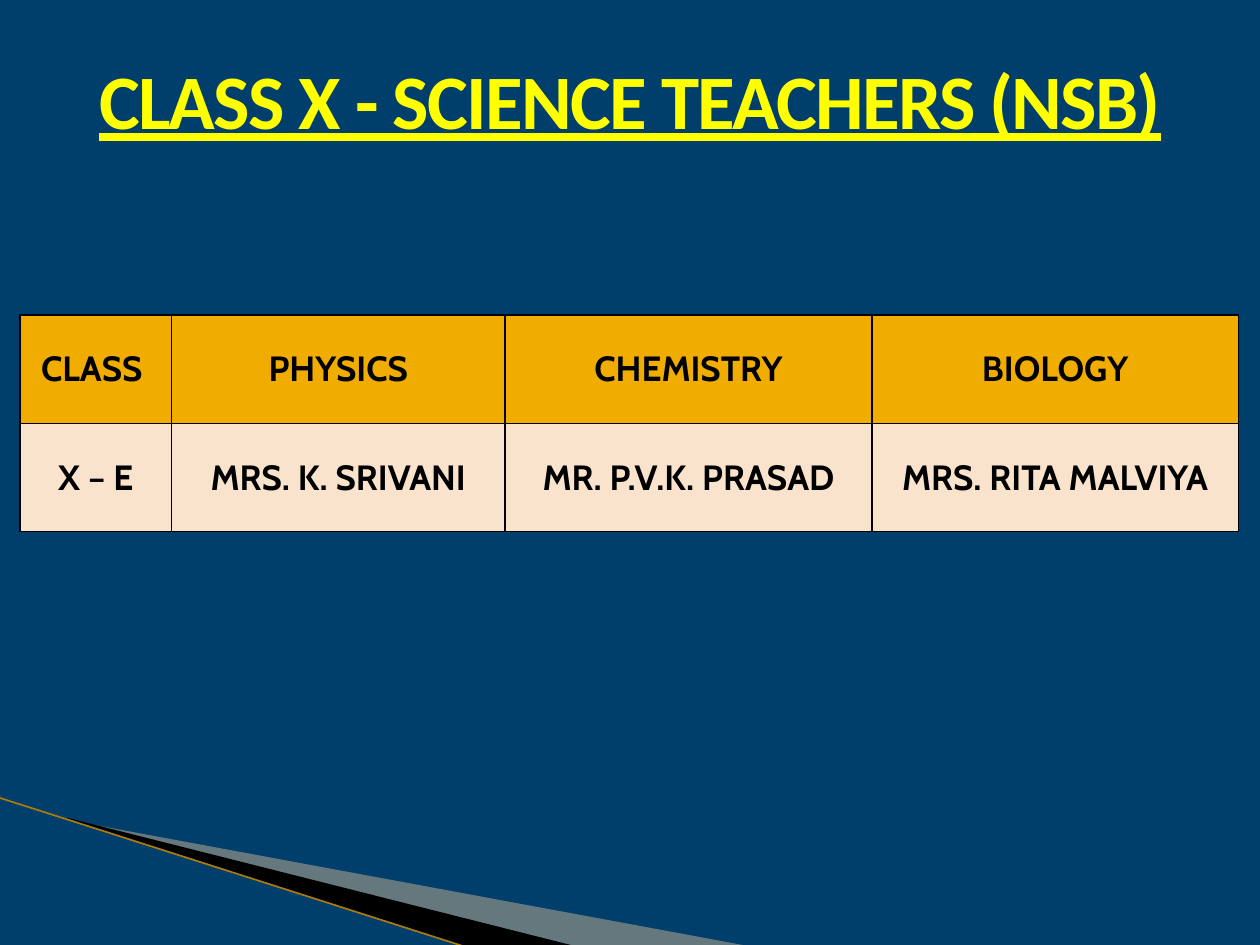
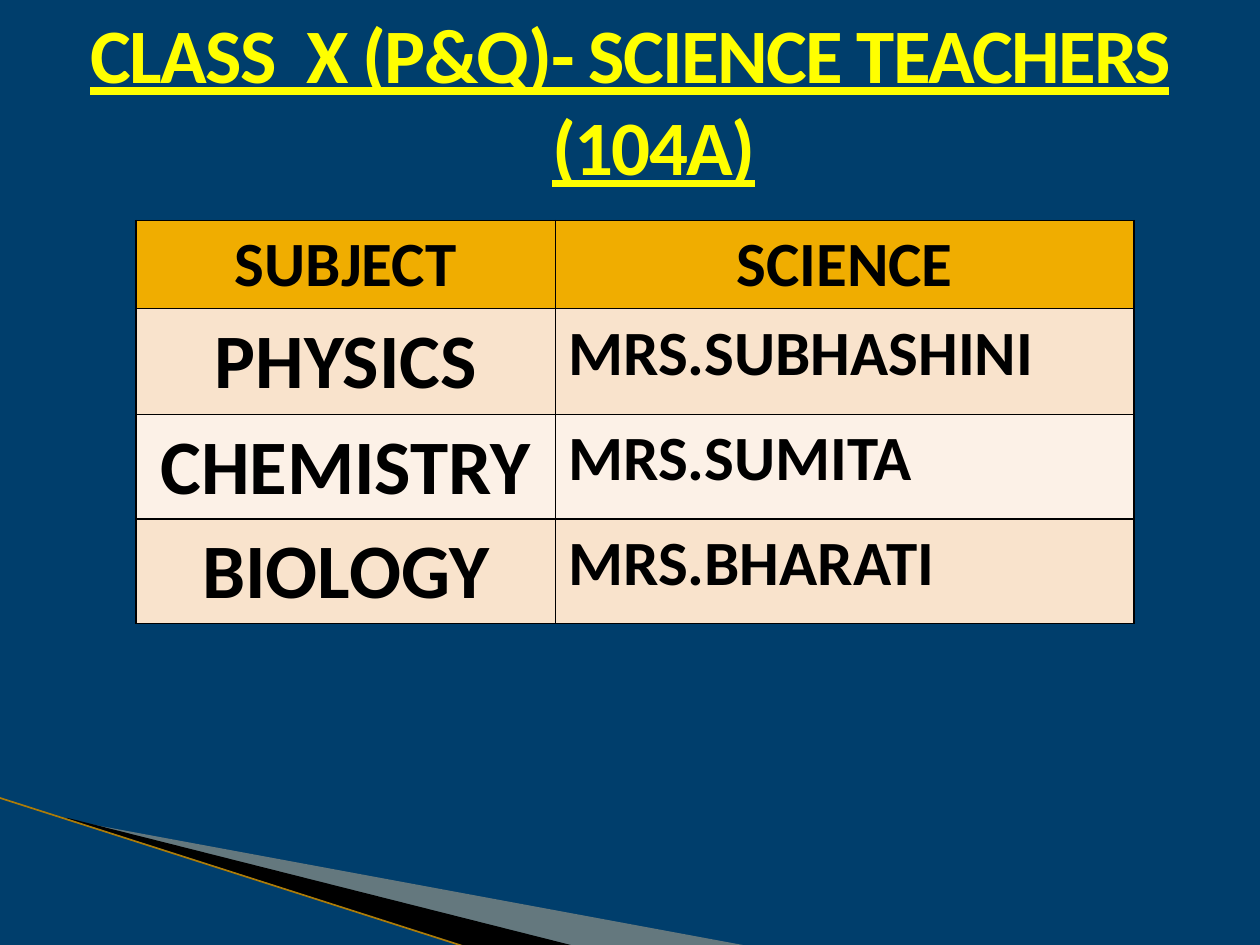
from pptx import Presentation
from pptx.dml.color import RGBColor
from pptx.enum.shapes import MSO_CONNECTOR
from pptx.enum.text import MSO_ANCHOR, PP_ALIGN
from pptx.oxml import parse_xml
from pptx.oxml.ns import nsdecls, qn
from pptx.util import Pt
from lxml import etree

PX = 9144  # 100 px to the inch
NAVY = RGBColor(0x00, 0x3E, 0x6C)
YELLOW = RGBColor(0xFF, 0xFF, 0x00)
GOLD = RGBColor(0xF0, 0xAD, 0x00)
DARK_GOLD = RGBColor(0xAD, 0x7C, 0x08)
PEACH = RGBColor(0xFC, 0xCF, 0x9B)
BAND = RGBColor(0xF9, 0xE3, 0xCC)
PALE_BAND = RGBColor(0xFC, 0xF1, 0xE7)
BLACK = RGBColor(0x00, 0x00, 0x00)

# Wedges in the lower left corner: frame, points, colour, opacity in percent
WEDGES = [
    ((78, 547, 416, 158), [(55, 651), (595, 751), (456, 751), (55, 650)], PEACH, 40),
    ((-6, 633, 416, 92), [(53, 649), (457, 751), (372, 752), (54, 650)], BLACK, 100),
]

SLIDES = [
    dict(
        title="CLASS X - SCIENCE TEACHERS (NSB)", title_height=121, spacing=1.5,
        left=16, top=250, cols=[120, 265, 291, 291], rows=[86, 86],
        font="Cabin", header_size=20, sizes=[20] * 4, anchor=MSO_ANCHOR.MIDDLE,
        margins=(5, 5), aligns=[PP_ALIGN.CENTER] * 4,
        cells=[["CLASS ", "PHYSICS", "CHEMISTRY", "BIOLOGY"],
               ["X – E", "MRS. K. SRIVANI", "MR. P.V.K. PRASAD", "MRS. RITA MALVIYA"]],
    ),
    dict(
        title="CLASS  X (P&Q)- SCIENCE TEACHERS (104A)", title_height=158, spacing=1.0,
        left=108, top=175, cols=[333, 459], rows=[70, 84, 83, 83],
        font="Calibri", header_size=36, sizes=[44, 36], anchor=MSO_ANCHOR.TOP,
        margins=(5, 3), aligns=[PP_ALIGN.CENTER, PP_ALIGN.LEFT],
        cells=[["SUBJECT", "SCIENCE"], ["PHYSICS", "MRS.SUBHASHINI"],
               ["CHEMISTRY", "MRS.SUMITA"], ["BIOLOGY", "MRS.BHARATI"]],
    ),
]


def add_run(p, text, font, size, color):
    r = p.add_run()
    r.text = text
    r.font.name = font
    r.font.size = Pt(size)
    r.font.bold = True
    r.font.color.rgb = color
    return r


def set_borders(cell):
    tcPr = cell._tc.get_or_add_tcPr()
    for i, side in enumerate(("lnL", "lnR", "lnT", "lnB")):
        tcPr.insert(i, parse_xml(
            f'<a:{side} {nsdecls("a")} w="{Pt(1)}"><a:solidFill>'
            f'<a:srgbClr val="{BLACK}"/></a:solidFill></a:{side}>'))


prs = Presentation()
prs.slide_width = 1000 * PX
prs.slide_height = 750 * PX

for page in SLIDES:
    s = prs.slides.add_slide(prs.slide_layouts[6])
    s.background.fill.solid()
    s.background.fill.fore_color.rgb = NAVY

    # Corner wedges, whose outlines reach past their frames
    for (left, top, width, height), points, color, opacity in WEDGES:
        fb = s.shapes.build_freeform(*points[0], scale=PX)
        fb.add_line_segments(points[1:], close=True)
        sp = fb.convert_to_shape()
        sp.left, sp.top, sp.width, sp.height = (v * PX for v in (left, top, width, height))
        outline = sp._element.spPr.find(".//" + qn("a:path"))
        outline.set("w", str(width))
        outline.set("h", str(height))
        for pt, (x, y) in zip(outline.iter(qn("a:pt")), points):
            pt.set("x", str(x - left))
            pt.set("y", str(y - top))
        sp.shadow.inherit = False
        sp.fill.solid()
        sp.fill.fore_color.rgb = color
        sp.line.fill.background()
        if opacity < 100:
            clr = sp._element.spPr.find(".//" + qn("a:srgbClr"))
            etree.SubElement(clr, qn("a:alpha")).set("val", str(opacity * 1000))

    # Thin line along the wedges
    line = s.shapes.add_connector(MSO_CONNECTOR.STRAIGHT, -1 * PX, 633 * PX, 371 * PX, 752 * PX)
    line.line.color.rgb = DARK_GOLD
    line.line.width = Pt(0.95)
    etree.SubElement(line._element.spPr, qn("a:effectLst"))

    # Title with a hanging indent
    tf = s.shapes.add_textbox(0, 0, 1000 * PX, page["title_height"] * PX).text_frame
    tf.word_wrap = True
    p = tf.paragraphs[0]
    p.alignment = PP_ALIGN.CENTER
    p.line_spacing = page["spacing"]
    pPr = p._p.get_or_add_pPr()
    pPr.set("marL", str(38 * PX))
    pPr.set("indent", str(-38 * PX))
    r = add_run(p, page["title"], "Calibri", 44, YELLOW)
    r.font.underline = True
    r._r.get_or_add_rPr().set("spc", "-100")

    # Teachers table
    cols, rows = page["cols"], page["rows"]
    table = s.shapes.add_table(len(rows), len(cols), page["left"] * PX, page["top"] * PX,
                               sum(cols) * PX, sum(rows) * PX).table
    table.first_row = table.horz_banding = False
    for col, width in zip(table.columns, cols):
        col.width = width * PX
    for i, (row, height) in enumerate(zip(table.rows, rows)):
        row.height = height * PX
        for j, cell in enumerate(row.cells):
            cell.margin_top, cell.margin_bottom = (m * PX for m in page["margins"])
            cell.vertical_anchor = page["anchor"]
            set_borders(cell)
            cell.fill.solid()
            cell.fill.fore_color.rgb = GOLD if i == 0 else BAND if i % 2 else PALE_BAND
            p = cell.text_frame.paragraphs[0]
            p.alignment = PP_ALIGN.CENTER if i == 0 else page["aligns"][j]
            size = page["header_size"] if i == 0 else page["sizes"][j]
            add_run(p, page["cells"][i][j], page["font"], size, BLACK)

prs.save("out.pptx")
